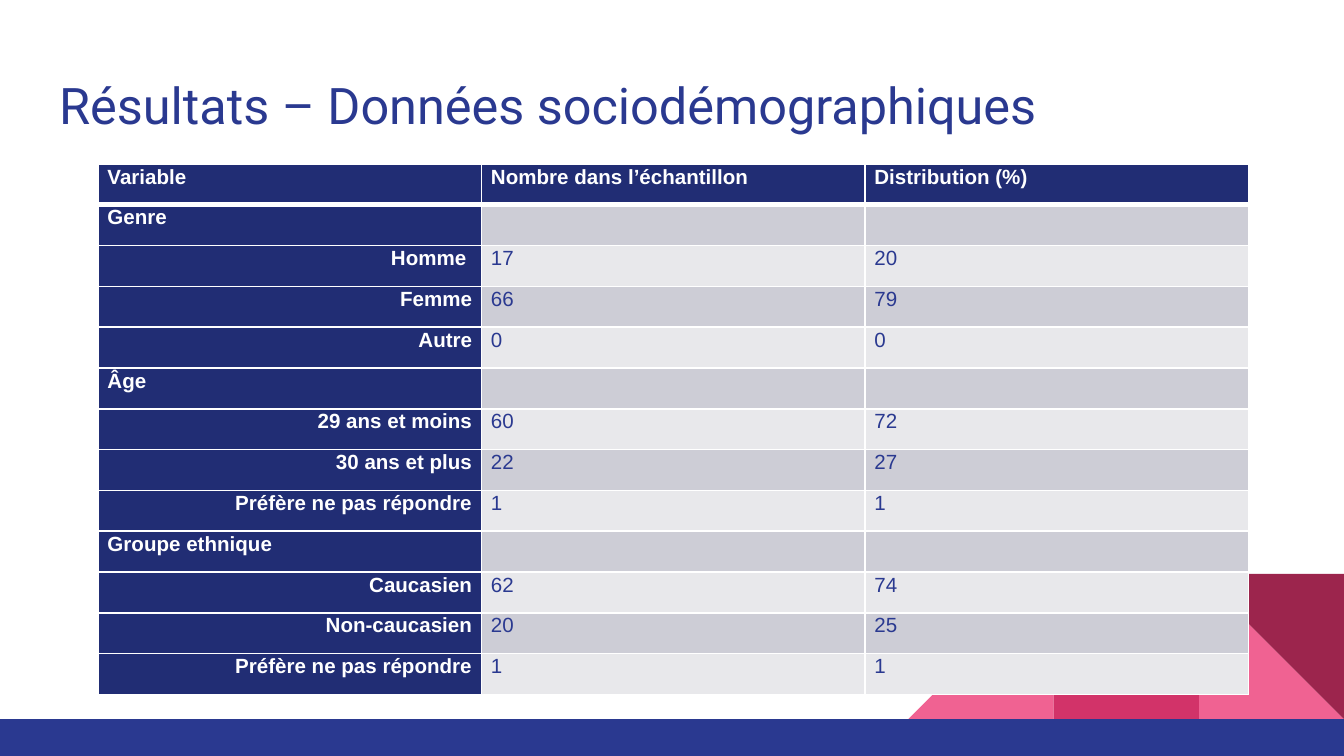
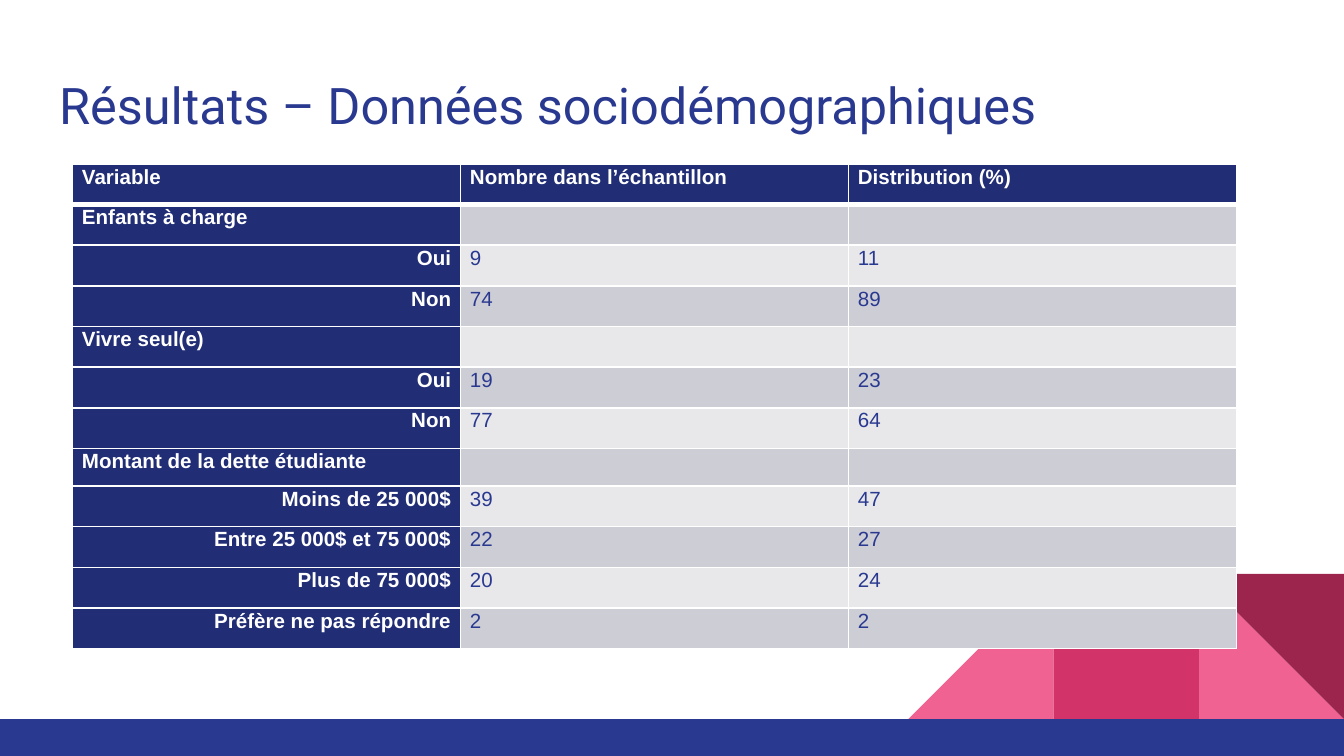
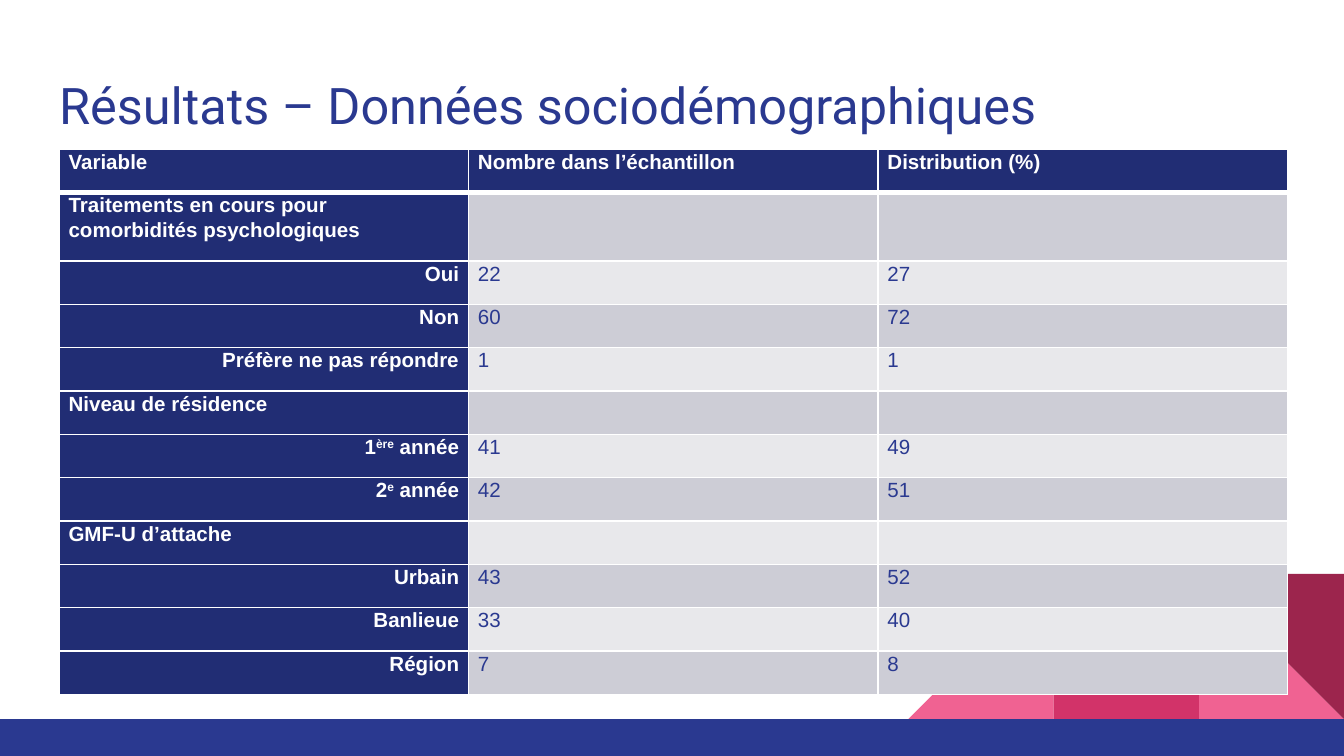
from dataclasses import dataclass

from lxml import etree
from pptx import Presentation
from pptx.dml.color import RGBColor
from pptx.enum.shapes import MSO_SHAPE
from pptx.enum.text import MSO_ANCHOR, MSO_AUTO_SIZE, PP_ALIGN
from pptx.oxml.ns import qn
from pptx.util import Inches, Pt

RECT = MSO_SHAPE.RECTANGLE
WEDGE = MSO_SHAPE.RIGHT_TRIANGLE
LEFT, RIGHT = PP_ALIGN.LEFT, PP_ALIGN.RIGHT
MIDDLE = MSO_ANCHOR.MIDDLE
FIXED = MSO_AUTO_SIZE.NONE

WIDTH = Inches(10)
HEIGHT = WIDTH * 9 // 16
COLS = 100
ROWS = COLS * 9 / 16
TILE = 10.8
BAND = 2.75
FLOOR = ROWS - BAND


@dataclass(frozen=True)
class Theme:
    blue: str = "2A3990"
    navy: str = "212D74"
    pink: str = "F06292"
    rose: str = "D23369"
    wine: str = "9C254D"
    dark: str = "CDCDD6"
    light: str = "E8E8EB"
    white: str = "FFFFFF"
    head: str = "Roboto"
    body: str = "Arial"
    big: int = 27
    small: int = 11
    thin: int = 1
    thick: int = 3


@dataclass(frozen=True)
class Box:
    left: float
    top: float
    width: float
    height: float

    def place(self) -> tuple[int, int, int, int]:
        return (unit(self.left), unit(self.top),
                unit(self.width), unit(self.height))


@dataclass(frozen=True)
class Block:
    kind: int
    box: Box
    color: str
    turn: int = 0
    flip: bool = False


@dataclass(frozen=True)
class Line:
    label: str
    count: str = ""
    share: str = ""


@dataclass(frozen=True)
class Page:
    box: Box
    lines: tuple[Line, ...]
    odd: int = 0
    tall: float = 0


LOOK = Theme()
TITLE = "Résultats – Données sociodémographiques"
TITLE_BOX = Box(3.4, 4.5, 93.2, 6.6)
HEADS = Line("Variable", "Nombre dans l’échantillon", "Distribution (%)")


def tile(back: int) -> Box:
    return Box(COLS - back * TILE, FLOOR - TILE, TILE, TILE)


DECOR = (
    Block(WEDGE, tile(1), LOOK.pink),
    Block(WEDGE, tile(3), LOOK.pink, flip=True),
    Block(RECT, tile(2), LOOK.rose),
    Block(WEDGE, tile(1), LOOK.wine, turn=180),
    Block(RECT, Box(0, FLOOR, COLS, BAND), LOOK.blue),
)

PAGES = (
    Page(Box(7.3, 12.2, 85.6, 39.5), (
        Line("Genre"),
        Line("Homme ", "17", "20"),
        Line("Femme", "66", "79"),
        Line("Autre", "0", "0"),
        Line("Âge"),
        Line("29 ans et moins", "60", "72"),
        Line("30 ans et plus", "22", "27"),
        Line("Préfère ne pas répondre", "1", "1"),
        Line("Groupe ethnique"),
        Line("Caucasien", "62", "74"),
        Line("Non-caucasien", "20", "25"),
        Line("Préfère ne pas répondre", "1", "1"),
    )),
    Page(Box(5.4, 12.2, 86.6, 36.1), (
        Line("Enfants à charge"),
        Line("Oui", "9", "11"),
        Line("Non", "74", "89"),
        Line("Vivre seul(e)"),
        Line("Oui", "19", "23"),
        Line("Non", "77", "64"),
        Line("Montant de la dette étudiante"),
        Line("Moins de 25 000$", "39", "47"),
        Line("Entre 25 000$ et 75 000$", "22", "27"),
        Line("Plus de 75 000$", "20", "24"),
        Line("Préfère ne pas répondre", "2", "2"),
    ), odd=7, tall=2.8),
    Page(Box(4.4, 11.1, 91.4, 40.6), (
        Line("Traitements en cours pour comorbidités psychologiques"),
        Line("Oui", "22", "27"),
        Line("Non", "60", "72"),
        Line("Préfère ne pas répondre", "1", "1"),
        Line("Niveau de résidence"),
        Line("1^ère^ année", "41", "49"),
        Line("2^e^ année", "42", "51"),
        Line("GMF-U d’attache"),
        Line("Urbain", "43", "52"),
        Line("Banlieue", "33", "40"),
        Line("Région", "7", "8"),
    ), odd=1, tall=5.1),
)


def unit(size: float) -> int:
    return round(WIDTH * size / COLS)


def rgb(color: str) -> RGBColor:
    return RGBColor.from_string(color)


def draw_block(slide, block: Block) -> None:
    shape = slide.shapes.add_shape(block.kind, *block.box.place())
    shape.shadow.inherit = False
    shape.fill.solid()
    shape.fill.fore_color.rgb = rgb(block.color)
    shape.line.fill.background()
    shape.rotation = block.turn
    if block.flip:
        shape._element.spPr.find(qn("a:xfrm")).set("flipH", "1")


def set_font(font, face: str, size: int, color: str, bold: bool) -> None:
    font.name = face
    font.size = Pt(size)
    font.color.rgb = rgb(color)
    font.bold = bold


def draw_title(slide) -> None:
    shape = slide.shapes.title
    shape.left, shape.top, shape.width, shape.height = TITLE_BOX.place()
    frame = shape.text_frame
    frame.text = TITLE
    frame.auto_size = FIXED
    frame.word_wrap = True
    frame.vertical_anchor = MIDDLE
    frame.margin_left = frame.margin_right = unit(1)
    frame.margin_top = frame.margin_bottom = unit(1)
    para = frame.paragraphs[0]
    para.alignment = LEFT
    set_font(para.runs[0].font, LOOK.head, LOOK.big, LOOK.blue, False)


def set_edges(cell, row: int) -> None:
    props = cell._tc.get_or_add_tcPr()
    for side in "LRTB":
        bold = (row, side) in ((0, "B"), (1, "T"))
        points = LOOK.thick if bold else LOOK.thin
        edge = etree.SubElement(props, qn(f"a:ln{side}"), w=str(Pt(points)))
        fill = etree.SubElement(edge, qn("a:solidFill"))
        etree.SubElement(fill, qn("a:srgbClr"), val=LOOK.white)


def fill_cell(cell, text: str, row: int, key: bool, align: int) -> None:
    set_edges(cell, row)
    cell.fill.solid()
    band = LOOK.dark if row % 2 else LOOK.light
    cell.fill.fore_color.rgb = rgb(LOOK.navy if key else band)
    cell.margin_left = cell.margin_right = unit(0.7)
    cell.margin_top = cell.margin_bottom = 0
    para = cell.text_frame.paragraphs[0]
    para.alignment = align
    para.line_spacing = 1.07
    para.space_after = Pt(8)
    if not text:
        etree.SubElement(para._p, qn("a:endParaRPr"), sz=str(LOOK.small * 100))
        return
    color = LOOK.white if key else LOOK.blue
    for index, part in enumerate(text.split("^")):
        run = para.add_run()
        run.text = part
        set_font(run.font, LOOK.body, LOOK.small, color, key)
        if index % 2:
            run._r.get_or_add_rPr().set("baseline", "30000")


def draw_table(slide, page: Page) -> None:
    lines = (HEADS,) + page.lines
    table = slide.shapes.add_table(len(lines), 3, *page.box.place()).table
    for col in table.columns:
        col.width = unit(page.box.width / 3)
    even = page.box.height / len(lines)
    if page.odd:
        even = (page.box.height - page.tall) / (len(lines) - 1)
    for row, line in enumerate(lines):
        special = page.odd and row == page.odd
        table.rows[row].height = unit(page.tall if special else even)
        for col, text in enumerate((line.label, line.count, line.share)):
            key = row == 0 or col == 0
            inner = row > 0 and col == 0 and line.count
            align = RIGHT if inner else LEFT
            fill_cell(table.cell(row, col), text, row, key, align)


def main() -> None:
    deck = Presentation()
    deck.slide_width, deck.slide_height = WIDTH, HEIGHT
    for page in PAGES:
        slide = deck.slides.add_slide(deck.slide_layouts[5])
        for block in DECOR:
            draw_block(slide, block)
        draw_title(slide)
        draw_table(slide, page)
    deck.save("out.pptx")


if __name__ == "__main__":
    main()
